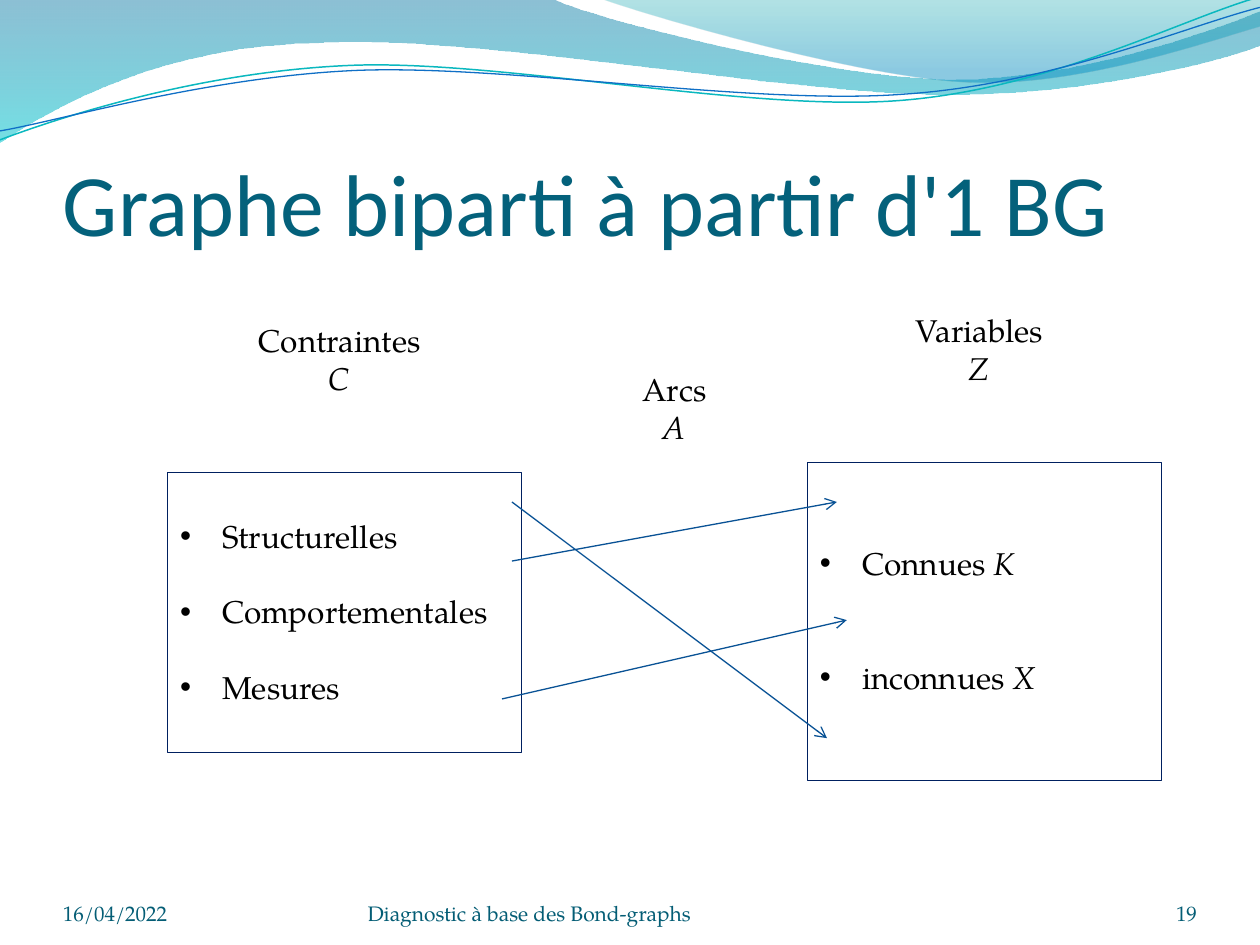
from lxml import etree
from pptx import Presentation
from pptx.dml.color import RGBColor
from pptx.enum.shapes import MSO_CONNECTOR, MSO_SHAPE
from pptx.enum.text import MSO_ANCHOR, PP_ALIGN
from pptx.oxml.ns import qn
from pptx.util import Cm, Pt

LEFT, CENTER, RIGHT = PP_ALIGN.LEFT, PP_ALIGN.CENTER, PP_ALIGN.RIGHT
TOP, BOTTOM = MSO_ANCHOR.TOP, MSO_ANCHOR.BOTTOM
RECTANGLE, STRAIGHT = MSO_SHAPE.RECTANGLE, MSO_CONNECTOR.STRAIGHT

THEME = {
    "title": RGBColor.from_string("04617B"),
    "footer": RGBColor.from_string("045D75"),
    "body": RGBColor.from_string("000000"),
    "frame": RGBColor.from_string("002060"),
    "arc": RGBColor.from_string("095295"),
    "title_size": 50,
    "body_size": 18,
    "footer_size": 12,
    "title_font": "Calibri",
    "body_font": "TeX Gyre Pagella",
    "hairline": Pt(0.75),
}


def write_text(shape, paragraphs, style="body", font="body_font", align=LEFT,
               anchor=TOP, margins=(0.25, 0.13, 0.25, 0.13), bullet=False, gap=0):
    frame = shape.text_frame
    frame.word_wrap = True
    frame.vertical_anchor = anchor
    frame.margin_left, frame.margin_top, frame.margin_right, frame.margin_bottom = map(Cm, margins)
    for index, spans in enumerate(paragraphs):
        para = frame.paragraphs[0] if index == 0 else frame.add_paragraph()
        if bullet:
            properties = para._p.get_or_add_pPr()
            properties.set("marL", str(Cm(0.85)))
            properties.set("indent", str(Cm(-0.85)))
            etree.SubElement(properties, qn("a:buFont")).set("typeface", "Arial")
            etree.SubElement(properties, qn("a:buChar")).set("char", "•")
        para.alignment = align
        if index and gap:
            para.space_before = Pt(gap)
        for text, italic in spans:
            span = para.add_run()
            span.text = text
            span.font.italic = italic
            span.font.name = THEME[font]
            span.font.size = Pt(THEME[style + "_size"])
            span.font.color.rgb = THEME[style]


def add_wave(shapes, start, segments, closed):
    points = []
    for segment in segments:
        points += [(Cm(x), Cm(y)) for x, y in zip(segment[::2], segment[1::2])]
    builder = shapes.build_freeform(*map(Cm, start))
    builder.add_line_segments(points, close=closed)
    wave = builder.convert_to_shape()
    wave.shadow.inherit = False
    lines = iter(list(wave._element.iter(qn("a:lnTo"))))
    for segment in segments:
        line = next(lines)
        if len(segment) == 6:
            curve = etree.Element(qn("a:cubicBezTo"))
            line.addprevious(curve)
            for handle in (line, next(lines), next(lines)):
                curve.append(handle[0])
                handle.getparent().remove(handle)
    return wave


deck = Presentation()
deck.slide_width, deck.slide_height = Cm(25.4), Cm(19.05)
page = deck.slides.add_slide(deck.slide_layouts[6])
shapes = page.shapes

bands = [
    ((0, 0),
     [(11.18, 0), (12.09, 0.43, 16.87, 1.6, 19.25, 1.6), (21.67, 1.6, 24.33, 0.66, 25.4, 0.23),
      (25.4, 0.91), (24.97, 1.12, 22.1, 1.93, 18.95, 1.9), (15.8, 1.9, 9.7, 0.71, 6.53, 0.86),
      (3.28, 0.91, 1.17, 2.11, 0, 2.87), (0, 0)],
     [(0, "0074A1", 45), (1, "00C6CF", 55)]),
    ((12.17, 0),
     [(12.93, 0.28, 17.32, 1.57, 19.53, 1.65), (21.74, 1.75, 24.41, 0.81, 25.4, 0.53),
      (25.4, 0), (12.17, 0)],
     [(0, "00A1A9", 30), (0.8, "008BBF", 45)]),
]
for start, segments, stops in bands:
    band = add_wave(shapes, start, segments, True)
    band.line.fill.background()
    band.fill.gradient()
    band.fill.gradient_angle = 270
    for stop, (position, color, opacity) in zip(band.fill.gradient_stops, stops):
        stop.position = position
        stop.color.rgb = RGBColor.from_string(color)
    for node, (position, color, opacity) in zip(band._element.spPr.iter(qn("a:srgbClr")), stops):
        etree.SubElement(node, qn("a:alpha")).set("val", str(opacity * 1000))

ripples = [
    ((0, 2.82),
     [(1.22, 2.36, 4.01, 1.45, 7.04, 1.32), (10.03, 1.19, 15.06, 2.26, 18.11, 2.03),
      (21.16, 1.8, 23.83, 0.38, 25.35, -0.05)], "0AB8BF", 0.85),
    ((0, 2.64),
     [(1.19, 2.44, 4.17, 1.55, 7.19, 1.42), (10.24, 1.3, 15.16, 2.13, 18.21, 1.9),
      (21.23, 1.7, 23.9, 0.53, 25.4, 0.15)], "0F6FC6", 0.75),
]
for start, segments, color, width in ripples:
    ripple = add_wave(shapes, start, segments, False)
    ripple.fill.background()
    ripple.line.color.rgb = RGBColor.from_string(color)
    ripple.line.width = Pt(width)

title = shapes.add_textbox(Cm(1.27), Cm(1.95), Cm(22.86), Cm(3.17))
write_text(title, [[("Graphe biparti à partir d'1 BG", False)]], style="title",
           font="title_font", anchor=BOTTOM, margins=(0, 0.13, 0, 0))

footers = [
    (1.27, 5.92, "16/04/2022", LEFT),
    (7.41, 9.32, "Diagnostic à base des Bond-graphs", LEFT),
    (22.02, 2.11, "19", RIGHT),
]
for left, width, text, align in footers:
    box = shapes.add_textbox(Cm(left), Cm(17.65), Cm(width), Cm(1.01))
    write_text(box, [[(text, False)]], style="footer", align=align, anchor=BOTTOM, margins=(0, 0, 0, 0))

headings = [
    (4.56, 6.35, "Contraintes", "C"),
    (17.46, 6.15, "Variables", "Z"),
    (11.31, 7.33, "Arcs", "A"),
]
for left, top, name, symbol in headings:
    box = shapes.add_textbox(Cm(left), Cm(top), Cm(4.57), Cm(1.8))
    write_text(box, [[(name, False)], [(symbol, True)]], align=CENTER)

sets = [
    (3.38, 9.53, 5.64, 0.89, 21.6,
     [[("Structurelles", False)], [("Comportementales", False)], [("Mesures", False)]]),
    (16.28, 9.32, 6.41, 1.65, 43.2,
     [[("Connues ", False), ("K", True)], [("inconnues ", False), ("X", True)]]),
]
for left, top, height, inset, gap, items in sets:
    box = shapes.add_shape(RECTANGLE, Cm(left), Cm(top), Cm(7.14), Cm(height))
    box.shadow.inherit = False
    box.fill.background()
    box.line.color.rgb = THEME["frame"]
    box.line.width = THEME["hairline"]
    write_text(box, items, margins=(0.25, inset, 0.25, 0.13), bullet=True, gap=gap)

arcs = [
    (10.32, 11.31, 16.87, 10.12),
    (10.32, 10.12, 16.67, 14.88),
    (10.12, 14.09, 17.07, 12.5),
]
for ends in arcs:
    arc = shapes.add_connector(STRAIGHT, *map(Cm, ends))
    arc.line.color.rgb = THEME["arc"]
    arc.line.width = THEME["hairline"]
    etree.SubElement(arc.line._get_or_add_ln(), qn("a:tailEnd")).set("type", "arrow")
    etree.SubElement(arc._element.spPr, qn("a:effectLst"))

deck.save("out.pptx")
